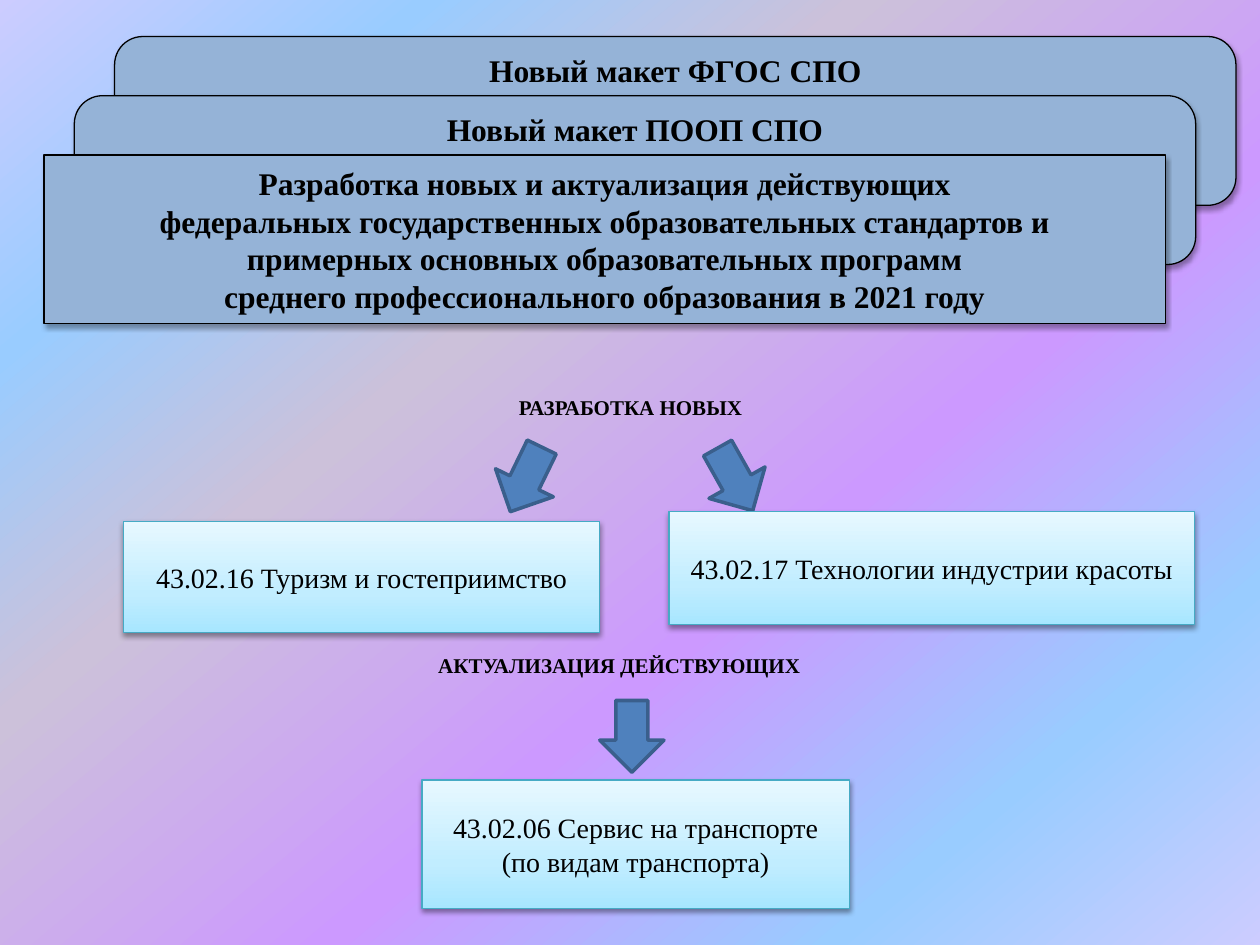
import dataclasses
import typing

import lxml.etree
import pptx
import pptx.dml.fill
import pptx.enum.shapes
import pptx.enum.text
import pptx.oxml
import pptx.oxml.ns
import pptx.shapes.autoshape
import pptx.slide
import pptx.text.text
import pptx.util

Inches = pptx.util.Inches
Pt = pptx.util.Pt
Preset = pptx.enum.shapes.MSO_SHAPE
Anchor = pptx.enum.text.MSO_ANCHOR
Stops = list[tuple[int, str]]

FONT = "Times New Roman"
COLORS = {
    "text": "000000",
    "banner": "95B3D7",
    "banner_line": "000000",
    "card_line": "46AAC5",
    "arrow": "4F81BD",
    "arrow_line": "3A5F8C",
    "shadow": "000000",
}
BACKGROUND_STOPS: Stops = [
    (0, "CCCCFF"), (18, "99CCFF"), (36, "CCC1DA"),
    (61, "CC99FF"), (82, "99CCFF"), (100, "CCCCFF"),
]
CARD_STOPS: Stops = [(0, "A7E6FF"), (35, "C1EDFF"), (100, "E7F8FF")]


@dataclasses.dataclass
class Frame:
    left: float
    top: float
    width: float
    height: float

    def lengths(self) -> list[int]:
        return [Inches(value) for value in dataclasses.astuple(self)]


@dataclasses.dataclass
class Label:
    frame: Frame
    text: str


@dataclasses.dataclass
class Arrow:
    left: float
    top: float
    rotation: float


BANNER_SIZE = (8.9, 1.34)
BACK_BANNERS = [
    Label(Frame(0.91, 0.29, *BANNER_SIZE), "Новый макет ФГОС СПО"),
    Label(Frame(0.59, 0.76, *BANNER_SIZE), "Новый макет ПООП СПО"),
]
TITLE_FRAME = Frame(0.35, 1.23, *BANNER_SIZE)
TITLE_LINES = [
    "Разработка новых и актуализация действующих",
    "федеральных государственных образовательных стандартов и",
    "примерных основных образовательных программ",
    "среднего профессионального образования в 2021 году",
]
HEADINGS = [
    Label(Frame(2.72, 3.04, 4.57, 0.46), "РАЗРАБОТКА НОВЫХ"),
    Label(Frame(2.87, 5.09, 4.09, 0.32), "АКТУАЛИЗАЦИЯ ДЕЙСТВУЮЩИХ"),
]
CARDS = [
    Label(Frame(3.35, 6.19, 3.39, 1.02), "43.02.06 Сервис на транспорте (по видам транспорта)"),
    Label(Frame(0.98, 4.14, 3.78, 0.88), "43.02.16 Туризм и гостеприимство"),
    Label(Frame(5.31, 4.06, 4.17, 0.9), "43.02.17 Технологии индустрии красоты"),
]
ARROWS = [Arrow(4.76, 5.56, 0), Arrow(3.92, 3.52, 25.9), Arrow(5.58, 3.52, 330.7)]


def rgb(name: str) -> pptx.dml.color.RGBColor:
    return pptx.dml.color.RGBColor.from_string(COLORS[name])


def add_node(parent: typing.Any, tag: str, **attributes: object) -> typing.Any:
    values = {key: str(value) for key, value in attributes.items()}
    return lxml.etree.SubElement(parent, pptx.oxml.ns.qn(tag), values)


def set_gradient(fill: pptx.dml.fill.FillFormat, owner: typing.Any, stops: Stops, angle: int) -> None:
    fill.gradient()
    gradient = owner.find(".//" + pptx.oxml.ns.qn("a:gradFill"))
    for child in list(gradient):
        gradient.remove(child)
    stop_list = add_node(gradient, "a:gsLst")
    for position, color in stops:
        stop = add_node(stop_list, "a:gs", pos=position * 1000)
        add_node(stop, "a:srgbClr", val=color)
    add_node(gradient, "a:lin", ang=angle * 60000, scaled=0)


def set_shadow(shape: pptx.shapes.autoshape.Shape, opacity: int, distance: float) -> None:
    shape.shadow.inherit = False
    effects = shape._element.spPr.find(pptx.oxml.ns.qn("a:effectLst"))
    shadow = add_node(effects, "a:outerShdw", blurRad=Pt(3.1), dist=Pt(distance),
                      dir=90 * 60000, rotWithShape=0)
    color = add_node(shadow, "a:srgbClr", val=COLORS["shadow"])
    add_node(color, "a:alpha", val=opacity * 1000)


def set_line(shape: pptx.shapes.autoshape.Shape, color: str, width: float) -> None:
    shape.line.color.rgb = rgb(color)
    shape.line.width = Pt(width)


def write_text(text_frame: pptx.text.text.TextFrame, lines: list[str], size: int,
               bold: bool, anchor: Anchor, spacing: float = 1.0) -> None:
    text_frame.word_wrap = True
    text_frame.auto_size = pptx.enum.text.MSO_AUTO_SIZE.NONE
    text_frame.vertical_anchor = anchor
    for index, line in enumerate(lines):
        para = text_frame.add_paragraph() if index else text_frame.paragraphs[0]
        para.alignment = pptx.enum.text.PP_ALIGN.CENTER
        para.line_spacing = spacing
        span = para.add_run()
        span.text = line
        span.font.name = FONT
        span.font.size = Pt(size)
        span.font.bold = bold
        span.font.color.rgb = rgb("text")


def style_banner(shape: pptx.shapes.autoshape.Shape, lines: list[str], anchor: Anchor) -> None:
    shape.fill.solid()
    shape.fill.fore_color.rgb = rgb("banner")
    set_line(shape, "banner_line", 0.75)
    set_shadow(shape, 35, 1.8)
    write_text(shape.text_frame, lines, 18, True, anchor)


def place_title(page: pptx.slide.Slide) -> None:
    title = page.shapes.title
    title.left, title.top, title.width, title.height = TITLE_FRAME.lengths()
    geometry = add_node(title._element.spPr, "a:prstGeom", prst="roundRect")
    add_node(geometry, "a:avLst")
    style_banner(title, TITLE_LINES, Anchor.MIDDLE)
    page.shapes._spTree.append(title._element)


def add_heading(page: pptx.slide.Slide, heading: Label) -> None:
    box = page.shapes.add_textbox(*heading.frame.lengths())
    write_text(box.text_frame, [heading.text], 12, True, Anchor.TOP, 1.2)


def add_card(page: pptx.slide.Slide, card: Label) -> None:
    box = page.shapes.add_shape(Preset.RECTANGLE, *card.frame.lengths())
    set_gradient(box.fill, box._element, CARD_STOPS, 270)
    set_line(box, "card_line", 0.75)
    set_shadow(box, 38, 1.6)
    write_text(box.text_frame, [card.text], 16, False, Anchor.MIDDLE)


def add_arrow(page: pptx.slide.Slide, arrow: Arrow) -> None:
    frame = Frame(arrow.left, arrow.top, 0.51, 0.57)
    shape = page.shapes.add_shape(Preset.DOWN_ARROW, *frame.lengths())
    shape.rotation = arrow.rotation
    shape.shadow.inherit = False
    shape.fill.solid()
    shape.fill.fore_color.rgb = rgb("arrow")
    set_line(shape, "arrow_line", 2)


def main() -> None:
    deck = pptx.Presentation()
    deck.slide_width, deck.slide_height = Inches(10), Inches(7.5)
    page = deck.slides.add_slide(deck.slide_layouts[5])
    set_gradient(page.background.fill, page._element, BACKGROUND_STOPS, 50)
    for banner in BACK_BANNERS:
        shape = page.shapes.add_shape(Preset.ROUNDED_RECTANGLE, *banner.frame.lengths())
        style_banner(shape, [banner.text], Anchor.TOP)
    place_title(page)
    for heading in HEADINGS:
        add_heading(page, heading)
    for arrow in ARROWS:
        add_arrow(page, arrow)
    for card in CARDS:
        add_card(page, card)
    deck.save("out.pptx")


if __name__ == "__main__":
    main()
